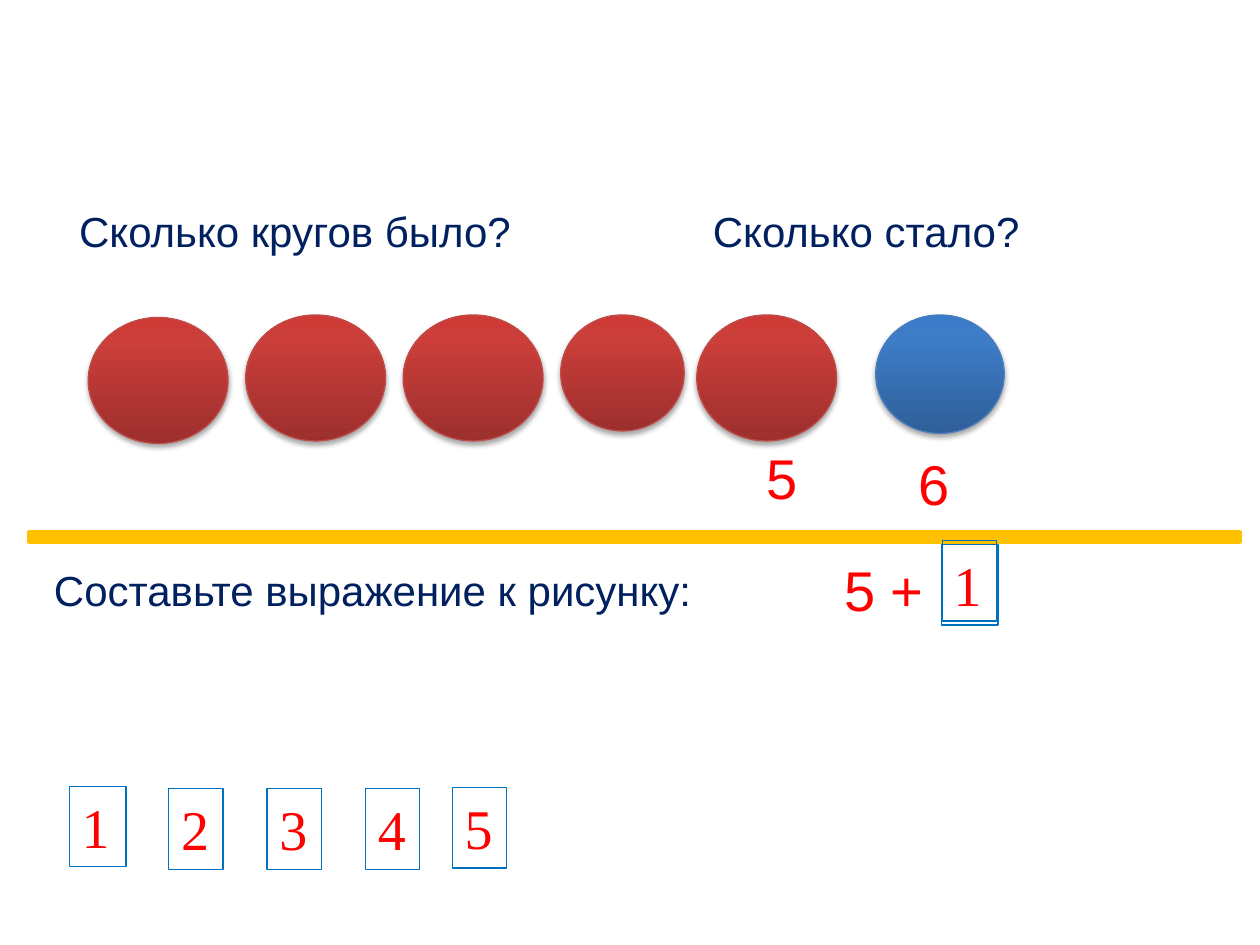
from copy import deepcopy

from lxml import etree
from pptx import Presentation
from pptx.dml.color import RGBColor
from pptx.enum.shapes import MSO_SHAPE
from pptx.enum.text import MSO_ANCHOR, PP_ALIGN
from pptx.oxml.ns import qn
from pptx.util import Inches, Pt

RECTANGLE, OVAL = MSO_SHAPE.RECTANGLE, MSO_SHAPE.OVAL
TOP, MIDDLE = MSO_ANCHOR.TOP, MSO_ANCHOR.MIDDLE
LEFT, CENTER = PP_ALIGN.LEFT, PP_ALIGN.CENTER

COLORS = {
    "question": "002060", "answer": "FF0000", "divider": "FFC000",
    "card": "0070C0", "shadow": "000000",
}
CIRCLE_STYLES = {
    "red": {"line": "BF4C48", "stops": [(0, "9C2F2D"), (0.8, "CB3E3A"), (1, "CE3B37")]},
    "blue": {"line": "4B7EBC", "stops": [(0, "2F5F99"), (0.8, "3D7CC7"), (1, "3A7CCB")]},
}

DIVIDER = (0.23, 4.22, 9.61, 0.08)
QUESTIONS = [
    ("Сколько кругов было?", (0.53, 1.58, 3.9, 0.5)),
    ("Сколько стало?", (5.56, 1.58, 3.06, 0.5)),
    ("Составьте выражение к рисунку:", (0.33, 4.43, 5.6, 0.5)),
]
ANSWERS = [
    ("5", (5.86, 3.44, 0.7, 0.7), {"align": CENTER, "anchor": MIDDLE}),
    ("6", (7.19, 3.52, 0.55, 0.64), {}),
    ("5 +", (6.6, 4.36, 1.09, 0.64), {}),
]
CIRCLES = [
    ("red", (0.7, 2.52, 1.11, 1)),
    ("red", (1.95, 2.5, 1.11, 1)),
    ("red", (3.2, 2.5, 1.11, 1)),
    ("red", (4.45, 2.5, 0.98, 0.92)),
    ("red", (5.53, 2.5, 1.11, 1)),
    ("blue", (6.95, 2.5, 1.02, 0.94)),
]
CARD_HEIGHT = 0.64
CARDS = [
    ("1", 0.55, 6.24, 0.45),
    ("2", 1.34, 6.26, 0.43),
    ("3", 2.12, 6.26, 0.43),
    ("4", 2.9, 6.26, 0.43),
    ("5", 3.59, 6.25, 0.43),
    ("", 7.48, 4.29, 0.43),
    ("1", 7.47, 4.32, 0.45),
]


def rgb(hex_color):
    return RGBColor.from_string(hex_color)


def place(box):
    return [Inches(length) for length in box]


def write(holder, text, *, size, color, font="Arial", align=LEFT, anchor=TOP, wrap=True):
    frame = holder.text_frame
    frame.word_wrap = wrap
    frame.vertical_anchor = anchor
    paragraph = frame.paragraphs[0]
    paragraph.alignment = align
    run = paragraph.add_run()
    run.text = text
    run.font.size = Pt(size)
    run.font.name = font
    run.font.color.rgb = rgb(color)


def add_outlined(slide, kind, box, line, width=0.75):
    shape = slide.shapes.add_shape(kind, *place(box))
    shape.shadow.inherit = False
    shape.line.color.rgb = rgb(line)
    shape.line.width = Pt(width)
    return shape


def add_circle(slide, style, box):
    circle = add_outlined(slide, OVAL, box, style["line"])
    circle.fill.gradient()
    circle.fill.gradient_angle = 90
    properties = circle._element.spPr
    stop_list = properties.find(".//" + qn("a:gsLst"))
    stop_list.append(deepcopy(stop_list[-1]))
    for stop, (position, color) in zip(circle.fill.gradient_stops, style["stops"]):
        stop.position = position
        stop.color.rgb = rgb(color)
    effects = properties.find(qn("a:effectLst"))
    shadow = etree.SubElement(
        effects, qn("a:outerShdw"), blurRad=str(Pt(3.1)), dist=str(Pt(1.8)),
        dir="5400000", rotWithShape="0")
    shade = etree.SubElement(shadow, qn("a:srgbClr"), val=COLORS["shadow"])
    etree.SubElement(shade, qn("a:alpha"), val="35000")


def add_card(slide, digit, left, top, width):
    card = add_outlined(slide, RECTANGLE, (left, top, width, CARD_HEIGHT), COLORS["card"])
    card.fill.background()
    if digit:
        write(card, digit, size=32, color=COLORS["answer"], font="Times New Roman", wrap=False)


def main():
    presentation = Presentation()
    presentation.slide_width, presentation.slide_height = Inches(10), Inches(7.5)
    slide = presentation.slides.add_slide(presentation.slide_layouts[6])

    divider = add_outlined(slide, RECTANGLE, DIVIDER, COLORS["divider"], width=2)
    divider.fill.solid()
    divider.fill.fore_color.rgb = rgb(COLORS["divider"])

    for question, box in QUESTIONS:
        write(slide.shapes.add_textbox(*place(box)), question, size=24, color=COLORS["question"])
    for answer, box, layout in ANSWERS:
        write(slide.shapes.add_textbox(*place(box)), answer, size=32,
              color=COLORS["answer"], **layout)
    for color, box in CIRCLES:
        add_circle(slide, CIRCLE_STYLES[color], box)
    for card in CARDS:
        add_card(slide, *card)

    presentation.save("out.pptx")


if __name__ == "__main__":
    main()
